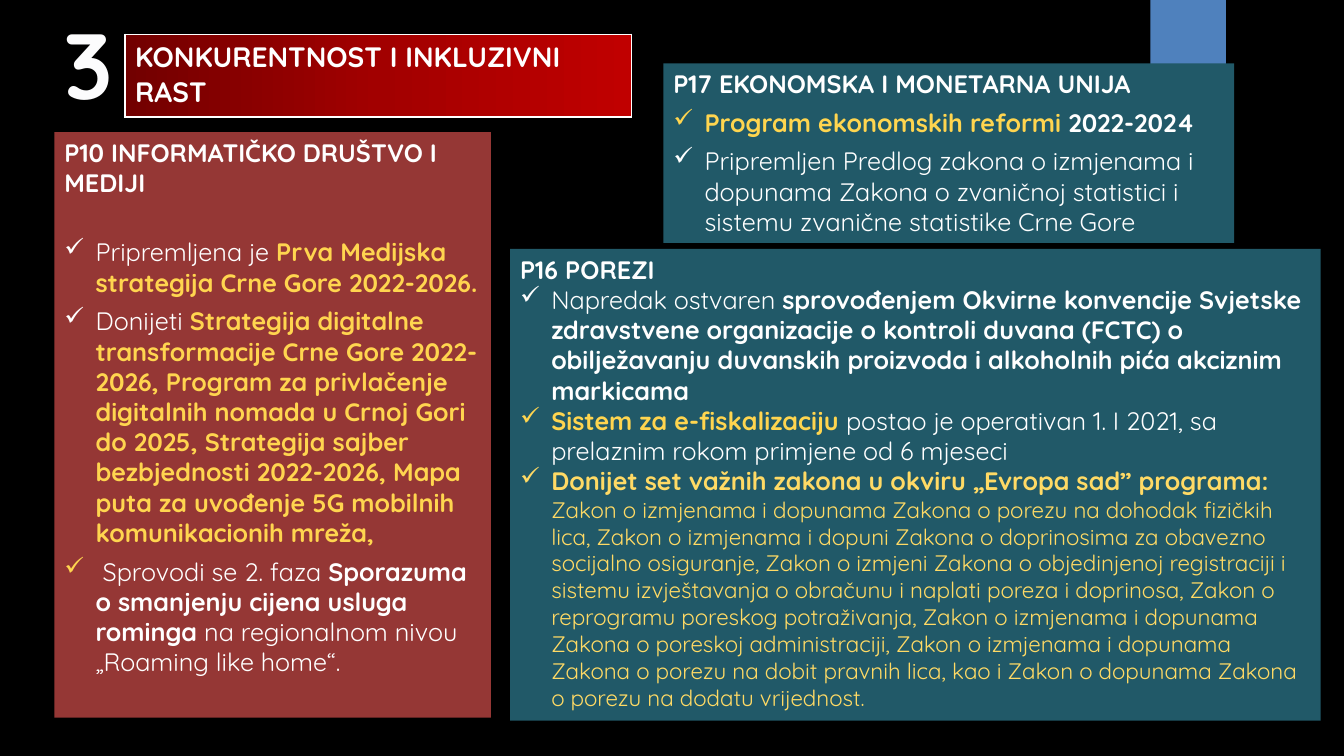
"""Build the slide on competitiveness and inclusive growth."""
import copy
from dataclasses import dataclass

import pptx
import pptx.util
import pptx.dml.color
import pptx.enum.shapes
import pptx.enum.text
import pptx.oxml.ns
from lxml import etree

Inches = pptx.util.Inches
Pt = pptx.util.Pt


@dataclass(frozen=True)
class Theme:
    """Colours, font and type sizes of the slide."""
    font: str = "Quicksand"
    background: str = "000000"
    white: str = "FFFFFF"
    number: str = "FCFCFD"
    gold: str = "FFD54F"
    pale_gold: str = "FFDA65"
    teal: str = "215968"
    red: str = "953735"
    tab: str = "4F81BD"
    banner: tuple = ("720000", "A20000", "C00000")
    number_size: int = 66
    banner_size: int = 20
    body_size: int = 18
    detail_size: int = 16


T = Theme()


def rgb(code):
    """Return a colour from its hex code."""
    return pptx.dml.color.RGBColor.from_string(code)


def add_run(p, text, color=T.white, bold=False, size=T.body_size):
    """Append one formatted run to a paragraph."""
    r = p.add_run()
    r.text = text
    r.font.name = T.font
    r.font.size = Pt(size)
    r.font.bold = bold
    r.font.color.rgb = rgb(color)
    return r


def add_rect(s, box, color):
    """Add a plain filled rectangle."""
    sp = s.shapes.add_shape(pptx.enum.shapes.MSO_SHAPE.RECTANGLE, *map(Inches, box))
    sp.shadow.inherit = False
    sp.fill.solid()
    sp.fill.fore_color.rgb = rgb(color)
    sp.line.fill.background()
    return sp


def set_check(p):
    """Give a paragraph a hanging check-mark bullet."""
    pPr = p._p.get_or_add_pPr()
    pPr.set("marL", str(Inches(0.31)))
    pPr.set("indent", str(-Inches(0.31)))
    etree.SubElement(pPr, pptx.oxml.ns.qn("a:buChar")).set("char", "✓")


def add_panel(s, box, color, heading, items, gap=0, first_gap=0):
    """Add a coloured panel with a heading and a checked list."""
    tf = add_rect(s, box, color).text_frame
    tf.word_wrap = True
    tf.vertical_anchor = pptx.enum.text.MSO_ANCHOR.TOP
    p = tf.paragraphs[0]
    p.alignment = pptx.enum.text.PP_ALIGN.LEFT
    add_run(p, heading, bold=True)
    for i, runs in enumerate(items):
        p = tf.add_paragraph()
        p.alignment = pptx.enum.text.PP_ALIGN.LEFT
        set_check(p)
        p.space_before = Pt(gap if i else first_gap)
        for run in runs:
            add_run(p, *run)


def add_banner(s, box, text):
    """Add the one-cell heading table with a gradient fill."""
    table = s.shapes.add_table(1, 1, *map(Inches, box)).table
    table.first_row = table.horz_banding = False
    cell = table.cell(0, 0)
    cell.fill.gradient()
    cell.fill.gradient_angle = 0
    first = cell.fill.gradient_stops[0]._gs
    first.addnext(copy.deepcopy(first))
    for i, (stop, code) in enumerate(zip(cell.fill.gradient_stops, T.banner)):
        stop.color.rgb = rgb(code)
        stop.position = i / 2
    add_run(cell.text_frame.paragraphs[0], text, bold=True, size=T.banner_size)


def add_number(s, box, text):
    """Add the large section number."""
    tf = s.shapes.add_textbox(*map(Inches, box)).text_frame
    tf.word_wrap = False
    p = tf.paragraphs[0]
    p.alignment = pptx.enum.text.PP_ALIGN.CENTER
    add_run(p, text, T.number, True, T.number_size)


def main():
    """Build and save the slide."""
    prs = pptx.Presentation()
    prs.slide_width, prs.slide_height = Inches(13.33), Inches(7.5)
    s = prs.slides.add_slide(prs.slide_layouts[6])
    s.background.fill.solid()
    s.background.fill.fore_color.rgb = rgb(T.background)

    add_rect(s, (11.41, 0, 0.75, 1.25), T.tab)
    add_panel(s, (6.58, 0.63, 5.66, 1.78), T.teal, "P17 EKONOMSKA I MONETARNA UNIJA", [
        [("Program ekonomskih reformi ", T.gold, True), ("2022-2024", T.white, True)],
        [("Pripremljen Predlog zakona o izmjenama i dopunama Zakona o zvaničnoj "
          "statistici i sistemu zvanične statistike Crne Gore",)],
    ], gap=6, first_gap=6)
    add_panel(s, (5.06, 2.47, 8.04, 4.68), T.teal, "P16 POREZI", [
        [("Napredak ostvaren ",),
         ("sprovođenjem Okvirne konvencije Svjetske zdravstvene organizacije o kontroli "
          "duvana (FCTC) o obilježavanju duvanskih proizvoda i alkoholnih pića akciznim "
          "markicama", T.white, True)],
        [("Sistem za e-fiskalizaciju ", T.gold, True),
         ("postao je operativan 1. I 2021, sa prelaznim rokom primjene od 6 mjeseci",)],
        [("Donijet set važnih zakona u okviru „Evropa sad” programa: ", T.pale_gold, True),
         ("Zakon o izmjenama i dopunama Zakona o porezu na dohodak fizičkih lica, "
          "Zakon o izmjenama i dopuni Zakona o doprinosima za obavezno socijalno "
          "osiguranje, Zakon o izmjeni Zakona o objedinjenoj registraciji i sistemu "
          "izvještavanja o obračunu i naplati poreza i doprinosa, Zakon o reprogramu "
          "poreskog potraživanja, Zakon o izmjenama i dopunama Zakona o poreskoj "
          "administraciji, Zakon o izmjenama i dopunama Zakona o porezu na dobit pravnih "
          "lica, kao i Zakon o dopunama Zakona o porezu na dodatu vrijednost.",
          T.pale_gold, False, T.detail_size)],
    ])
    add_panel(s, (0.54, 1.31, 4.33, 5.81), T.red, "P10 INFORMATIČKO DRUŠTVO I MEDIJI", [
        [("Pripremljena je ",),
         ("Prva Medijska strategija Crne Gore 2022-2026.", T.gold, True)],
        [("Donijeti ",),
         ("Strategija digitalne transformacije Crne Gore 2022-2026, Program za "
          "privlačenje digitalnih nomada u Crnoj Gori do 2025, Strategija sajber "
          "bezbjednosti 2022-2026, Mapa puta za uvođenje 5G mobilnih komunikacionih "
          "mreža,", T.gold, True)],
        [(" ", T.gold, True), ("Sprovodi se 2. faza ",),
         ("Sporazuma o smanjenju cijena usluga rominga ", T.white, True),
         ("na regionalnom nivou „Roaming like home“.",)],
    ], gap=6, first_gap=28)
    add_banner(s, (1.24, 0.34, 5.02, 0.82), "KONKURENTNOST I INKLUZIVNI RAST")
    add_number(s, (0.51, 0.02, 0.73, 1.21), "3")
    prs.save("out.pptx")


if __name__ == "__main__":
    main()
